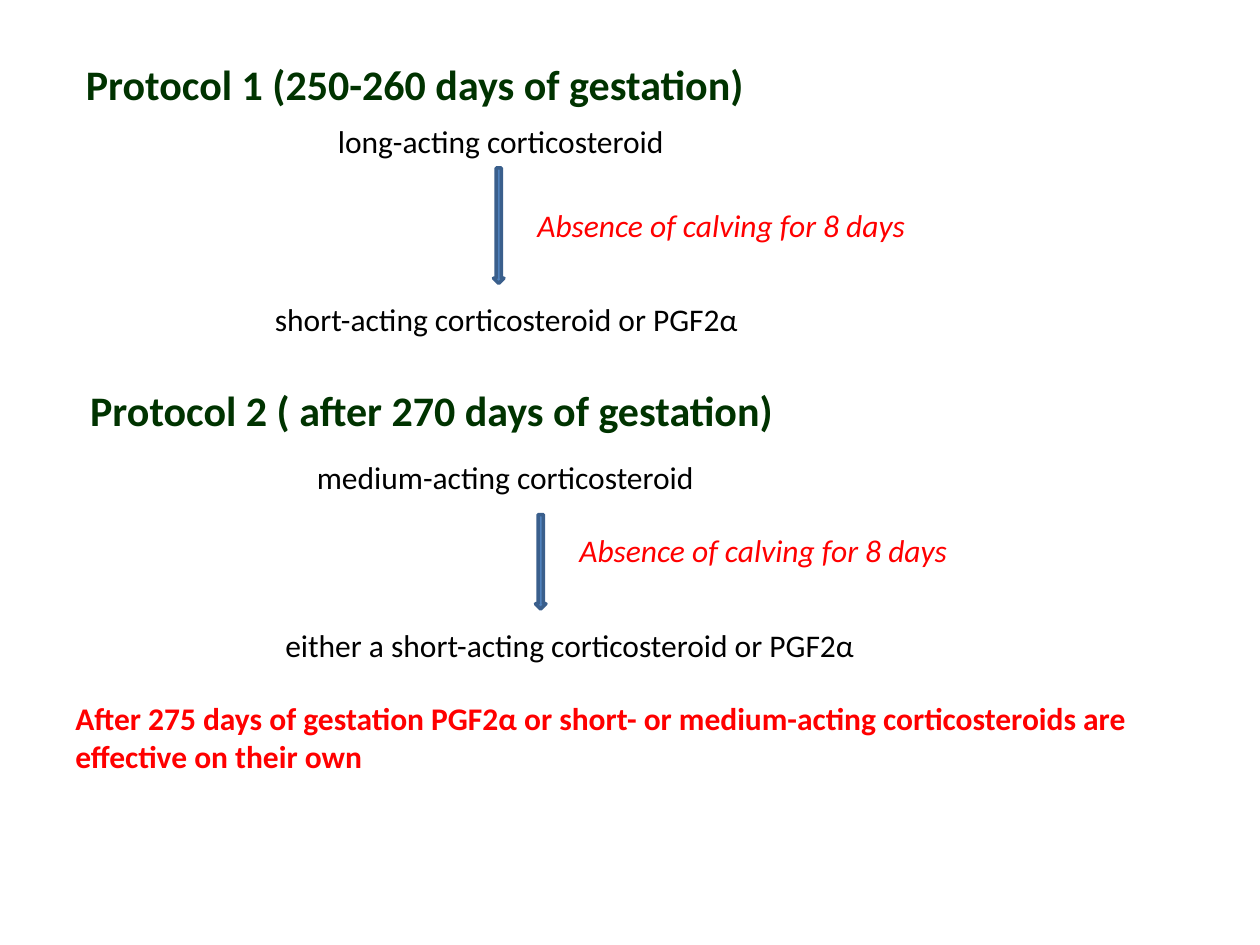
import pptx
import pptx.util
import pptx.dml.color
import pptx.enum.shapes
import pptx.enum.text

PX = 7620
COLORS = {
    "heading": "003300",
    "body": "000000",
    "alert": "FF0000",
    "arrow": "4F81BD",
    "arrow_line": "3A5F8C",
}
LINE_HEIGHT = 48
HEADING_HEIGHT = 60
ARROW_WIDTH = 10
WAIT_TEXT = "Absence of calving for 8 days"
WAIT_WIDTH = 378

PROTOCOLS = [
    {
        "box": (70, 50, 656, 278),
        "heading": "Protocol 1 (250-260 days of gestation)",
        "align": "LEFT",
        "first": ("long-acting corticosteroid", 240, 60, 338, False),
        "arrow": (400, 110, 110),
        "second": ("short-acting corticosteroid or PGF2α", 180, 472),
    },
    {
        "box": (70, 360, 682, 278),
        "heading": "Protocol 2 ( after 270 days of gestation)",
        "align": "CENTER",
        "first": ("medium-acting corticosteroid", 220, 70, 600, True),
        "arrow": (440, 130, 90),
        "second": ("either a short-acting corticosteroid or PGF2α", 190, 574),
    },
]


def emu(*lengths):
    return [pptx.util.Emu(length * PX) for length in lengths]


def rgb(name):
    return pptx.dml.color.RGBColor.from_string(COLORS[name])


def add_text(slide, box, text, color="body", size=18, bold=None, italic=None,
             wrap=False, align="LEFT"):
    shape = slide.shapes.add_textbox(*emu(*box))
    text_frame = shape.text_frame
    text_frame.word_wrap = wrap
    text_frame.auto_size = pptx.enum.text.MSO_AUTO_SIZE.SHAPE_TO_FIT_TEXT
    text_frame.text = text
    paragraph = text_frame.paragraphs[0]
    paragraph.alignment = getattr(pptx.enum.text.PP_ALIGN, align)
    font = paragraph.runs[0].font
    font.name = "Calibri"
    font.size = pptx.util.Pt(size)
    font.bold = bold
    font.italic = italic
    font.color.rgb = rgb(color)


def add_down_arrow(slide, box):
    shape = slide.shapes.add_shape(
        pptx.enum.shapes.MSO_SHAPE.DOWN_ARROW, *emu(*box))
    shape.shadow.inherit = False
    shape.fill.solid()
    shape.fill.fore_color.rgb = rgb("arrow")
    shape.line.color.rgb = rgb("arrow_line")
    shape.line.width = pptx.util.Pt(2)


def add_protocol(slide, protocol):
    left, top, width, height = protocol["box"]
    add_text(slide, (left, top, width, HEADING_HEIGHT), protocol["heading"],
             "heading", 24, bold=True, align=protocol["align"])

    text, x, y, text_width, wrap = protocol["first"]
    add_text(slide, (left + x, top + y, text_width, LINE_HEIGHT), text, wrap=wrap)

    x, y, arrow_height = protocol["arrow"]
    add_down_arrow(slide, (left + x, top + y, ARROW_WIDTH, arrow_height))
    add_text(slide, (left + x + 30, top + 140, WAIT_WIDTH, LINE_HEIGHT),
             WAIT_TEXT, "alert", italic=True)

    text, x, text_width = protocol["second"]
    add_text(slide, (left + x, top + height - LINE_HEIGHT, text_width, LINE_HEIGHT),
             text)


def add_conclusion(slide, box):
    add_text(slide, box,
             "After 275 days of gestation PGF2α or short- or medium-acting "
             "corticosteroids are effective on their own",
             "alert", bold=True, wrap=True)


def main():
    presentation = pptx.Presentation()
    presentation.slide_width, presentation.slide_height = emu(1200, 900)
    slide = presentation.slides.add_slide(presentation.slide_layouts[6])
    for protocol in PROTOCOLS:
        add_protocol(slide, protocol)
    add_conclusion(slide, (60, 660, 1080, 85))
    presentation.save("out.pptx")


if __name__ == "__main__":
    main()
